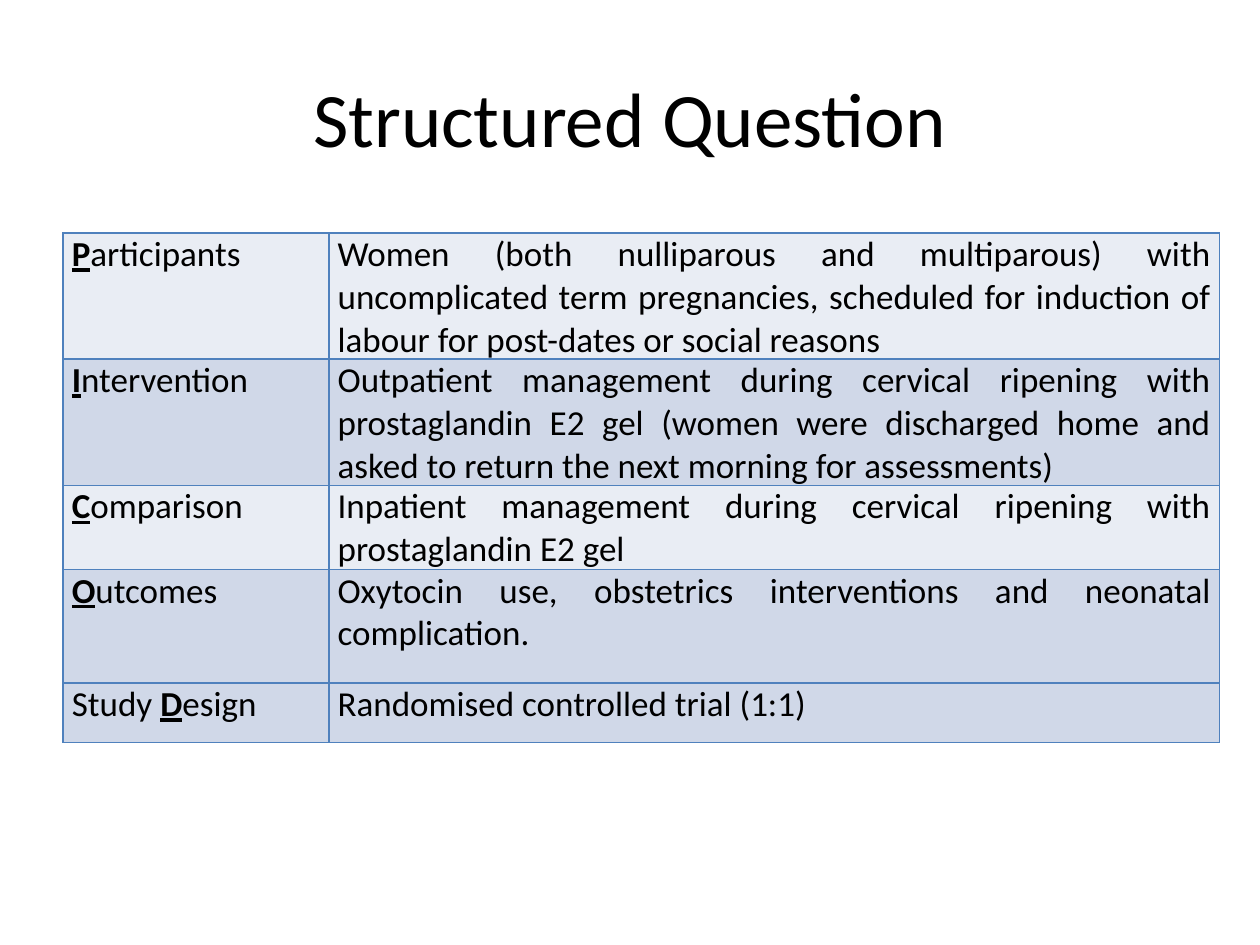
from dataclasses import dataclass
from lxml.etree import SubElement as Sub
from pptx import Presentation
from pptx.dml.color import RGBColor as RGB
from pptx.enum.text import MSO_ANCHOR as Anchor, PP_ALIGN as Align
from pptx.oxml.ns import qn
from pptx.util import Inches, Pt


@dataclass(frozen=True)
class Theme:
    font: str = "Calibri"
    ink: str = "000000"
    pale: str = "E9EDF4"
    deep: str = "D0D8E8"
    edge: str = "4F81BD"
    line: int = 1
    head: int = 44
    body: int = 20


THEME = Theme()
TITLE = "Structured Question"
ROWS = [
    (("", "P", "articipants"),
     "Women (both nulliparous and multiparous) with uncomplicated term "
     "pregnancies, scheduled for induction of labour for post-dates or social reasons",
     THEME.pale, 1),
    (("", "I", "ntervention"),
     "Outpatient management during cervical ripening with prostaglandin E2 gel "
     "(women were discharged home and asked to return the next morning for assessments)",
     THEME.deep, 1),
    (("", "C", "omparison"),
     "Inpatient management during cervical ripening with prostaglandin E2 gel",
     THEME.pale, 0.67),
    (("", "O", "utcomes"),
     "Oxytocin use, obstetrics interventions and neonatal complication.",
     THEME.deep, 0.9),
    (("Study ", "D", "esign"), "Randomised controlled trial (1:1)",
     THEME.deep, 0.47),
]
COLS = (2.11, 7.07)


def style(run, size, key=False):
    """Set the type of one run."""
    font = run.font
    font.name, font.size = THEME.font, Pt(size)
    font.color.rgb = RGB.from_string(THEME.ink)
    font.bold = font.underline = key


def border(cell):
    """Draw the four edges of a cell ahead of its fill."""
    props = cell._tc.get_or_add_tcPr()
    for side in ("lnL", "lnR", "lnT", "lnB"):
        line = Sub(props, qn(f"a:{side}"), w=str(Pt(THEME.line)))
        fill = Sub(line, qn("a:solidFill"))
        Sub(fill, qn("a:srgbClr"), val=THEME.edge)


def dress(cell, parts, fill):
    """Fill a cell with text, marking the second of several parts."""
    border(cell)
    cell.fill.solid()
    cell.fill.fore_color.rgb = RGB.from_string(fill)
    cell.margin_left = cell.margin_right = Inches(0.07)
    cell.margin_top = cell.margin_bottom = 0
    para = cell.text_frame.paragraphs[0]
    para.alignment = Align.JUSTIFY
    for i, part in enumerate(parts):
        if part:
            run = para.add_run()
            run.text = part
            style(run, THEME.body, i == 1)


def add_title(slide):
    """Place the centred heading."""
    box = slide.shapes.add_textbox(Inches(0.5), Inches(0.3), Inches(9), Inches(1.25))
    frame = box.text_frame
    frame.word_wrap = True
    frame.vertical_anchor = Anchor.MIDDLE
    frame.text = TITLE
    para = frame.paragraphs[0]
    para.alignment = Align.CENTER
    style(para.runs[0], THEME.head)


def add_grid(slide):
    """Place the table of question parts."""
    high = sum(row[-1] for row in ROWS)
    table = slide.shapes.add_table(
        len(ROWS), len(COLS), Inches(0.5), Inches(1.85),
        Inches(sum(COLS)), Inches(high)).table
    table.first_row = table.horz_banding = False
    for col, wide in zip(table.columns, COLS):
        col.width = Inches(wide)
    for row, (label, text, fill, tall) in zip(table.rows, ROWS):
        row.height = Inches(tall)
        dress(row.cells[0], label, fill)
        dress(row.cells[1], (text,), fill)


def main():
    """Build and save the slide."""
    deck = Presentation()
    deck.slide_width, deck.slide_height = Inches(10), Inches(7.5)
    slide = deck.slides.add_slide(deck.slide_layouts[6])
    add_title(slide)
    add_grid(slide)
    deck.save("out.pptx")


if __name__ == "__main__":
    main()
